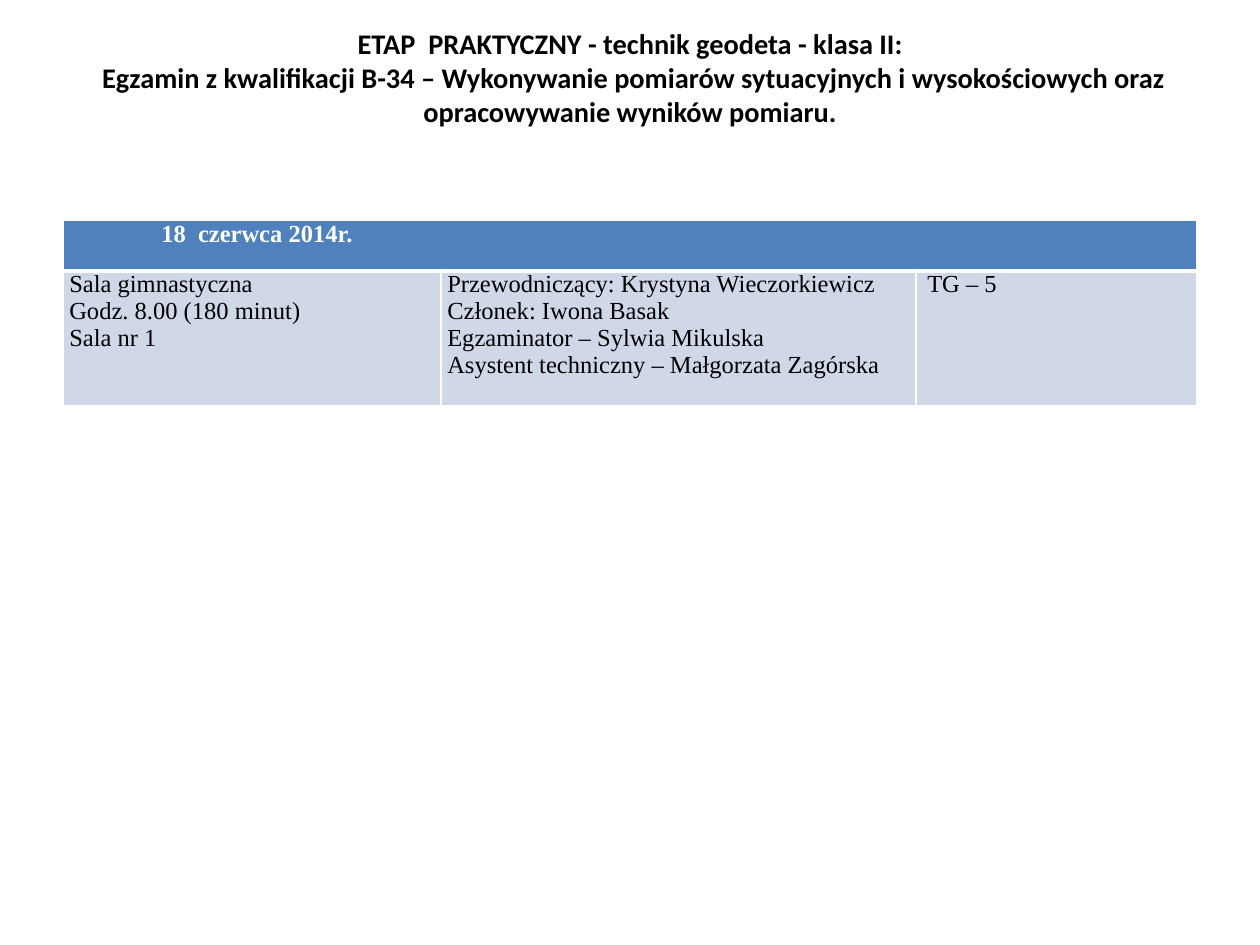
from lxml import etree
from pptx import Presentation
from pptx.dml.color import RGBColor
from pptx.enum.text import MSO_ANCHOR, PP_ALIGN
from pptx.oxml.ns import qn
from pptx.util import Inches, Pt

MIDDLE = MSO_ANCHOR.MIDDLE
CENTER = PP_ALIGN.CENTER

COLORS = {"head": "4F81BD", "body": "D0D8E8", "white": "FFFFFF", "black": "000000"}

TITLE = (
    "ETAP  PRAKTYCZNY - technik geodeta - klasa II:\v"
    " Egzamin z kwalifikacji B-34 – Wykonywanie pomiarów sytuacyjnych "
    "i wysokościowych oraz opracowywanie wyników pomiaru."
)
DATE = "18  czerwca 2014r."
ROOM = "Sala gimnastyczna\nGodz. 8.00 (180 minut)\nSala nr 1"
STAFF = (
    "Przewodniczący: Krystyna Wieczorkiewicz\nCzłonek: Iwona Basak\n"
    "Egzaminator – Sylwia Mikulska\nAsystent techniczny – Małgorzata Zagórska"
)
GROUP = "TG – 5"

WIDTHS = (3, 3.77, 2.23)
HEIGHTS = (0.4, 1.07)


def color(name):
    return RGBColor.from_string(COLORS[name])


def style(frame, face, size, tint, bold):
    for para in frame.paragraphs:
        font = para.font
        font.name, font.size, font.bold = face, Pt(size), bold
        font.color.rgb = color(tint)


def add_title(slide):
    title = slide.shapes.title
    title.left, title.top = Inches(0.5), Inches(0.3)
    title.width, title.height = Inches(9), Inches(1.25)
    frame = title.text_frame
    frame.text = TITLE
    frame.vertical_anchor = MIDDLE
    # Raise the text above the middle of the box
    frame.margin_top, frame.margin_bottom = 0, Inches(0.63)
    frame.paragraphs[0].alignment = CENTER
    style(frame, "Calibri", 16.2, "black", True)


def add_border(cell, side, width):
    props = cell._tc.get_or_add_tcPr()
    line = etree.Element(qn(f"a:ln{side}"), w=str(Pt(width)))
    fill = etree.SubElement(line, qn("a:solidFill"))
    etree.SubElement(fill, qn("a:srgbClr"), val=COLORS["white"])
    # Borders come before the fill in the cell properties
    props.insert("LRTB".index(side), line)


def fill_cell(cell, text, left, head=False):
    cell.text = text
    cell.margin_left, cell.margin_right = Inches(left), Inches(0.05)
    cell.margin_top = cell.margin_bottom = 0
    style(cell.text_frame, "Times New Roman", 14, "white" if head else "black", head)


def add_plan(slide):
    frame = slide.shapes.add_table(
        len(HEIGHTS), len(WIDTHS), Inches(0.5), Inches(1.75),
        Inches(sum(WIDTHS)), Inches(sum(HEIGHTS)),
    )
    table = frame.table
    for col, width in zip(table.columns, WIDTHS):
        col.width = Inches(width)
    for row, height in zip(table.rows, HEIGHTS):
        row.height = Inches(height)

    # Fills and white rules, with a thick one under the header
    for num, row in enumerate(table.rows):
        for cell in row.cells:
            cell.fill.solid()
            cell.fill.fore_color.rgb = color("body" if num else "head")
            for side in "LRTB":
                thick = side == ("T" if num else "B")
                add_border(cell, side, 3 if thick else 1)

    # Header row
    table.cell(0, 0).merge(table.cell(0, 2))
    fill_cell(table.cell(0, 0), DATE, 0.78, head=True)

    # Exam row
    for num, (text, left) in enumerate(((ROOM, 0.05), (STAFF, 0.05), (GROUP, 0.09))):
        fill_cell(table.cell(1, num), text, left)


def main():
    deck = Presentation()
    deck.slide_width, deck.slide_height = Inches(10), Inches(7.5)
    slide = deck.slides.add_slide(deck.slide_layouts[5])
    add_title(slide)
    add_plan(slide)
    deck.save("out.pptx")


if __name__ == "__main__":
    main()
